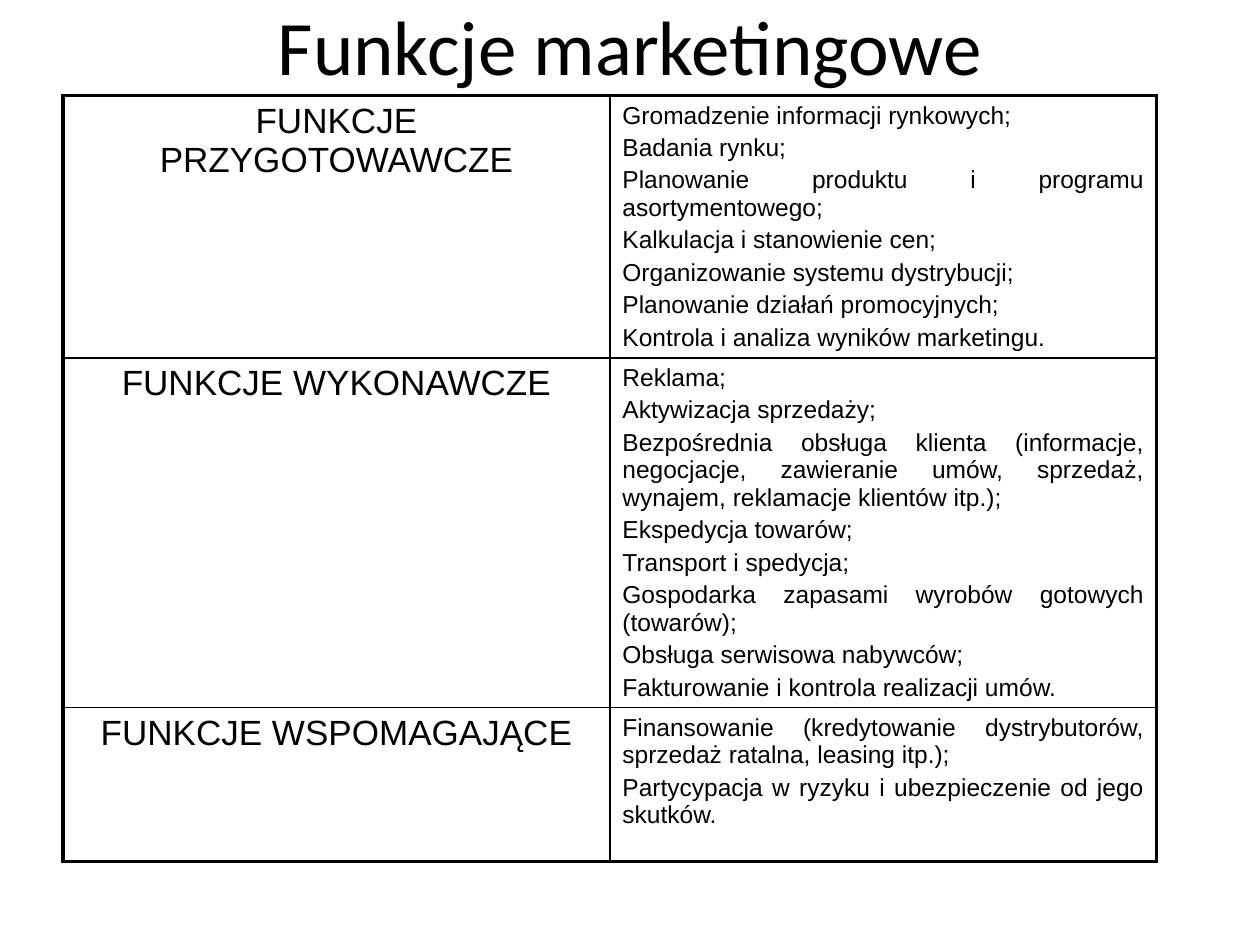
import dataclasses

import lxml.etree
import pptx
import pptx.dml.color
import pptx.enum.text
import pptx.oxml.ns
import pptx.util

Align = pptx.enum.text.PP_ALIGN
WIDE, HIGH = 10, 7.5
COLORS = {"ink": "000000"}
THICK, THIN = 2.25, 1
SHARES = (0.22, 0.22, 0.163)  # least row heights; long text makes rows grow


@dataclasses.dataclass(frozen=True)
class Group:
    name: str
    tasks: tuple[str, ...]


@dataclasses.dataclass(frozen=True)
class Style:
    size: int
    align: Align


HEAD = Style(20, Align.CENTER)
TASK = Style(14, Align.JUSTIFY)

GROUPS = (
    Group("FUNKCJE PRZYGOTOWAWCZE", (
        "Gromadzenie informacji rynkowych;",
        "Badania rynku;",
        "Planowanie produktu i programu asortymentowego;",
        "Kalkulacja i stanowienie cen;",
        "Organizowanie systemu dystrybucji;",
        "Planowanie działań promocyjnych;",
        "Kontrola i analiza wyników marketingu.",
    )),
    Group("FUNKCJE WYKONAWCZE", (
        "Reklama;",
        "Aktywizacja sprzedaży;",
        "Bezpośrednia obsługa klienta (informacje, negocjacje, "
        "zawieranie umów, sprzedaż, wynajem, reklamacje klientów itp.);",
        "Ekspedycja towarów;",
        "Transport i spedycja;",
        "Gospodarka zapasami wyrobów gotowych (towarów);",
        "Obsługa serwisowa nabywców;",
        "Fakturowanie i kontrola realizacji umów.",
    )),
    Group("FUNKCJE WSPOMAGAJĄCE", (
        "Finansowanie (kredytowanie dystrybutorów, sprzedaż ratalna, "
        "leasing itp.);",
        "Partycypacja w ryzyku i ubezpieczenie od jego skutków.",
    )),
)


def across(share: float) -> int:
    return pptx.util.Inches(WIDE * share)


def down(share: float) -> int:
    return pptx.util.Inches(HIGH * share)


def set_font(par, face: str, size: int) -> None:
    par.font.name = face
    par.font.size = pptx.util.Pt(size)
    par.font.color.rgb = pptx.dml.color.RGBColor.from_string(COLORS["ink"])


def write(cell, lines: tuple[str, ...], style: Style) -> None:
    frame = cell.text_frame
    frame.text = "\n".join(lines)
    for par in frame.paragraphs:
        par.alignment = style.align
        par.space_before = pptx.util.Pt(style.size * 0.2)
        set_font(par, "Arial", style.size)


def border(cell, row: int, col: int) -> None:
    """Draw thick lines on the table's rim and thin ones inside."""
    cell.fill.background()
    rim = {"lnL": col == 0, "lnR": col == 1,
           "lnT": row == 0, "lnB": row == len(GROUPS) - 1}
    qn = pptx.oxml.ns.qn
    props = cell._tc.get_or_add_tcPr()
    for spot, (tag, edge) in enumerate(rim.items()):
        line = lxml.etree.Element(qn(f"a:{tag}"))
        line.set("w", str(pptx.util.Pt(THICK if edge else THIN)))
        fill = lxml.etree.SubElement(line, qn("a:solidFill"))
        lxml.etree.SubElement(fill, qn("a:srgbClr"), val=COLORS["ink"])
        props.insert(spot, line)


def add_title(slide, text: str) -> None:
    title = slide.shapes.title
    title.left, title.top = across(0.05), down(-0.036)
    title.width, title.height = across(0.9), down(0.167)
    frame = title.text_frame
    frame.text = text
    frame.vertical_anchor = pptx.enum.text.MSO_ANCHOR.MIDDLE
    par = frame.paragraphs[0]
    par.alignment = Align.CENTER
    set_font(par, "Calibri", 44)


def add_grid(slide) -> None:
    table = slide.shapes.add_table(
        len(GROUPS), 2, across(0.05), down(0.101),
        across(0.868), down(sum(SHARES))).table
    table.first_row = table.horz_banding = False
    for row, (group, share) in enumerate(zip(GROUPS, SHARES)):
        table.rows[row].height = down(share)
        parts = (((group.name,), HEAD), (group.tasks, TASK))
        for col, (lines, style) in enumerate(parts):
            cell = table.cell(row, col)
            write(cell, lines, style)
            border(cell, row, col)


def main() -> None:
    deck = pptx.Presentation()
    deck.slide_width, deck.slide_height = across(1), down(1)
    slide = deck.slides.add_slide(deck.slide_layouts[5])
    add_title(slide, "Funkcje marketingowe")
    add_grid(slide)
    deck.save("out.pptx")


if __name__ == "__main__":
    main()
